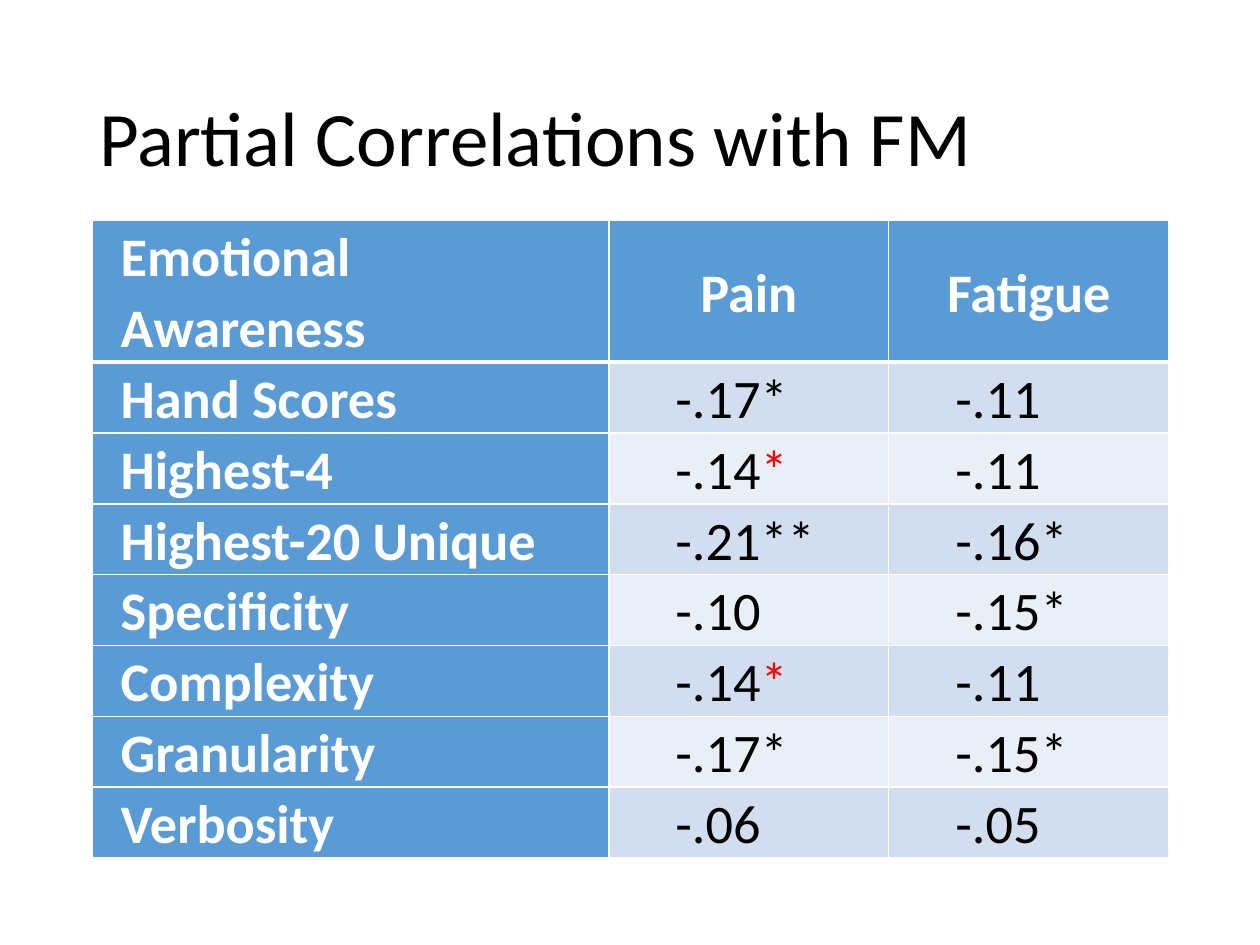
import pptx
import pptx.dml.color
import pptx.enum.text
import pptx.oxml
import pptx.oxml.ns
import pptx.util

FONT = "Calibri"
WHITE, BLACK, RED, BLUE = "FFFFFF", "000000", "FF0000", "5B9BD5"
BANDS = ("D2DEEF", "EAEFF7")
HEADINGS = ("Emotional Awareness", "Pain", "Fatigue")
CORRELATIONS = (
    ("Hand Scores", ["-.17*"], ["-.11"]),
    ("Highest-4", ["-.14", "*"], ["-.11"]),
    ("Highest-20 Unique", ["-.21**"], ["-.16*"]),
    ("Specificity", ["-.10"], ["-.15*"]),
    ("Complexity", ["-.14", "*"], ["-.11"]),
    ("Granularity", ["-.17*"], ["-.15*"]),
    ("Verbosity", ["-.06"], ["-.05"]),
)


def color(value):
    """Turn a hex string into a colour."""
    return pptx.dml.color.RGBColor.from_string(value)


def add_run(paragraph, text, size, hex_color, bold=False):
    """Add one formatted run to a paragraph."""
    run = paragraph.add_run()
    run.text = text
    run.font.name = FONT
    run.font.size = pptx.util.Pt(size)
    run.font.bold = bold
    run.font.color.rgb = color(hex_color)


def set_borders(cell, bottom_width):
    """Draw white borders around a cell, with a given bottom width."""
    properties = cell._tc.get_or_add_tcPr()
    widths = (("lnL", 1), ("lnR", 1), ("lnT", 1), ("lnB", bottom_width))
    for position, (side, width) in enumerate(widths):
        properties.insert(position, pptx.oxml.parse_xml(
            f'<a:{side} {pptx.oxml.ns.nsdecls("a")} w="{pptx.util.Pt(width)}">'
            f'<a:solidFill><a:srgbClr val="{WHITE}"/></a:solidFill></a:{side}>'))


def format_cell(cell, fill, bottom_width=1):
    """Set the fill, margins and borders of a cell and return its paragraph."""
    cell.fill.solid()
    cell.fill.fore_color.rgb = color(fill)
    cell.margin_left = cell.margin_right = pptx.util.Pt(16.5)
    cell.margin_top = cell.margin_bottom = 0
    set_borders(cell, bottom_width)
    paragraph = cell.text_frame.paragraphs[0]
    paragraph.line_spacing = 1.07
    return paragraph


def indent_number(paragraph):
    """Indent a number and give it a decimal tab stop."""
    properties = paragraph._p.get_or_add_pPr()
    properties.set("marL", str(pptx.util.Pt(21.6)))
    properties.set("indent", "0")
    properties.append(pptx.oxml.parse_xml(
        f'<a:tabLst {pptx.oxml.ns.nsdecls("a")}>'
        f'<a:tab pos="{pptx.util.Pt(14.4)}" algn="dec"/></a:tabLst>'))


def place_title(slide, left, top, width, height):
    """Place and format the slide title."""
    title = slide.shapes.title
    title.left, title.top = pptx.util.Pt(left), pptx.util.Pt(top)
    title.width, title.height = pptx.util.Pt(width), pptx.util.Pt(height)
    title.text_frame.vertical_anchor = pptx.enum.text.MSO_ANCHOR.MIDDLE
    paragraph = title.text_frame.paragraphs[0]
    paragraph.alignment = pptx.enum.text.PP_ALIGN.LEFT
    paragraph.line_spacing = 0.9
    add_run(paragraph, "Partial Correlations with FM", 44, BLACK)


def place_table(slide, left, top, width, height):
    """Place the table of correlations."""
    table = slide.shapes.add_table(
        len(CORRELATIONS) + 1, len(HEADINGS), pptx.util.Pt(left), pptx.util.Pt(top),
        pptx.util.Pt(width), pptx.util.Pt(height)).table
    table.first_col = True
    for column, share in zip(table.columns, (0.48, 0.26, 0.26)):
        column.width = pptx.util.Pt(width * share)
    row_height = height / (len(CORRELATIONS) + 2)
    for index, row in enumerate(table.rows):
        row.height = pptx.util.Pt(row_height * (2 if index == 0 else 1))

    for column, heading in enumerate(HEADINGS):
        cell = table.cell(0, column)
        cell.vertical_anchor = pptx.enum.text.MSO_ANCHOR.MIDDLE
        paragraph = format_cell(cell, BLUE, 3)
        if column:
            paragraph.alignment = pptx.enum.text.PP_ALIGN.CENTER
        add_run(paragraph, heading, 31, WHITE, True)

    for row, (measure, *values) in enumerate(CORRELATIONS, 1):
        add_run(format_cell(table.cell(row, 0), BLUE), measure, 31, WHITE, True)
        for column, parts in enumerate(values, 1):
            paragraph = format_cell(table.cell(row, column), BANDS[(row - 1) % 2])
            indent_number(paragraph)
            for text, hex_color in zip(parts, (BLACK, RED)):
                add_run(paragraph, text, 31, hex_color)


def main():
    """Build and save the presentation."""
    presentation = pptx.Presentation()
    presentation.slide_width = pptx.util.Pt(720)
    presentation.slide_height = pptx.util.Pt(540)
    slide = presentation.slides.add_slide(presentation.slide_layouts[5])
    place_title(slide, 49.5, 28.75, 621, 104.4)
    place_table(slide, 52.5, 126, 615.4, 360)
    presentation.save("out.pptx")


if __name__ == "__main__":
    main()
